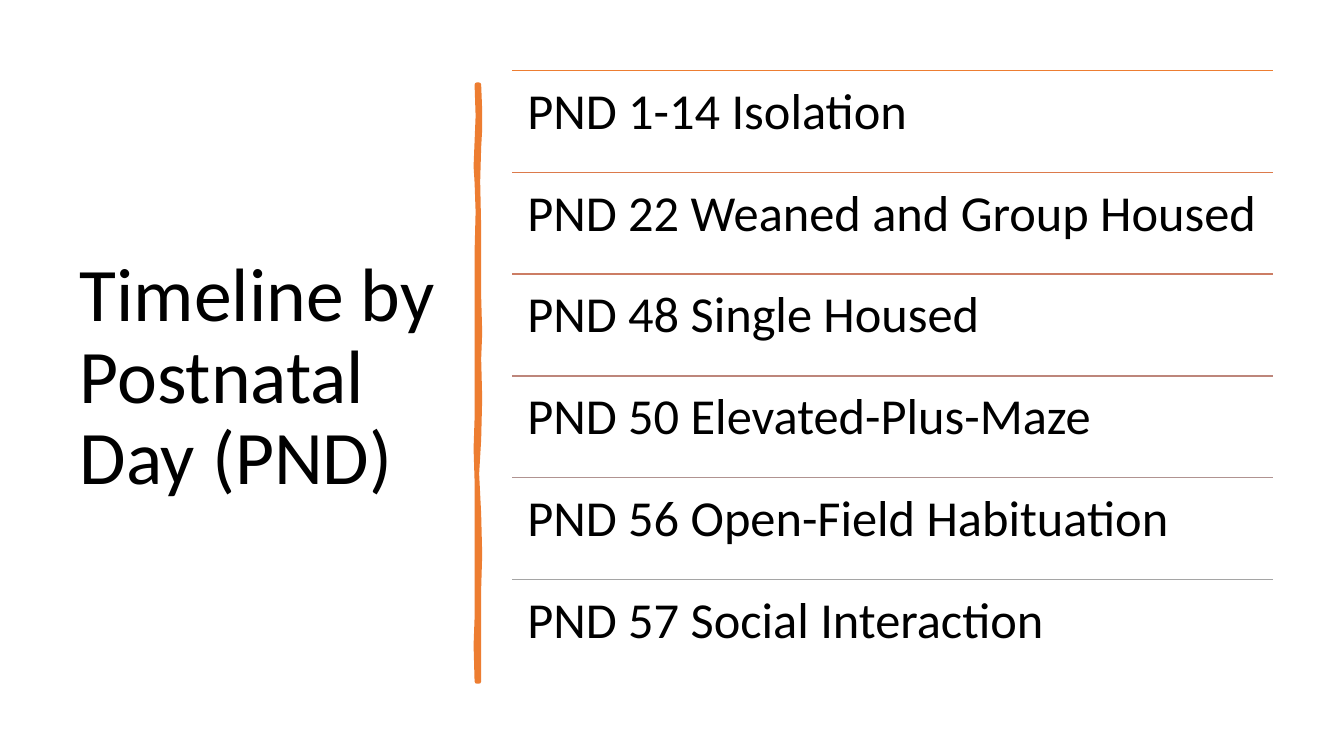
"""Build the postnatal day timeline slide."""
from dataclasses import dataclass

from lxml import etree
from pptx import Presentation
from pptx import util as u
from pptx.dml.color import RGBColor
from pptx.enum import text
from pptx.oxml.ns import qn

PX = 9144
TITLE_ONLY = 5
ROW_TOP, ROW_LEFT, ROW_WIDTH, ROW_HEIGHT = 70, 508, 755, 101
ROW_INSET = 15


@dataclass(frozen=True)
class Theme:
    """Hold the colours, font and type sizes of the slide."""
    font: str = "Calibri"
    ink: str = "000000"
    accent: str = "ED7D31"
    title_size: int = 54
    event_size: int = 36
    rule_width: float = 1
    brush_width: float = 3.25


THEME = Theme()

EVENTS = [
    ("PND 1-14 Isolation", "ED7D31"),
    ("PND 22 Weaned and Group Housed", "DC7A4B"),
    ("PND 48 Single Housed", "CC7D64"),
    ("PND 50 Elevated-Plus-Maze", "BD867B"),
    ("PND 56 Open-Field Habituation", "B09391"),
    ("PND 57 Social Interaction", "A5A5A5"),
]

BRUSH_RIGHT = [
    (475, 84), (476, 110), (476, 128), (475, 146), (474, 180), (475, 226),
    (475, 294), (476, 330), (475, 356), (476, 395), (475, 436), (473, 470),
    (475, 510), (476, 550), (475, 584), (475, 676),
]
BRUSH_LEFT = [
    (473, 676), (472, 640), (473, 613), (473, 557), (473, 477), (472, 445),
    (473, 415), (473, 335), (473, 250), (474, 210), (473, 181), (472, 165),
    (474, 115), (473, 84),
]


def px(*lengths):
    """Turn pixel lengths into EMU."""
    return [u.Emu(length * PX) for length in lengths]


def apply(target, values):
    """Set each attribute named in a dict of format values."""
    for name, value in values.items():
        setattr(target, name, value)


def write(frame, words, size, frame_format):
    """Write one left-aligned paragraph into a text frame."""
    apply(frame, {"word_wrap": True, "auto_size": text.MSO_AUTO_SIZE.NONE, **frame_format})
    paragraph = frame.paragraphs[0]
    apply(paragraph, {"text": words, "line_spacing": 0.9, "alignment": text.PP_ALIGN.LEFT})
    apply(paragraph.font, {"name": THEME.font, "size": u.Pt(size)})
    paragraph.font.color.rgb = RGBColor.from_string(THEME.ink)


def stroke(line, color, width):
    """Give a line its colour and width."""
    line.color.rgb = RGBColor.from_string(color)
    line.width = u.Pt(width)


def add_title(slide, words):
    """Place the slide title at the left."""
    title = slide.shapes.title
    apply(title, dict(zip(("left", "top", "width", "height"), px(69, 70, 374, 611))))
    write(title.text_frame, words, THEME.title_size,
          {"vertical_anchor": text.MSO_ANCHOR.MIDDLE})


def add_brush(slide):
    """Draw the uneven upright brush stroke."""
    start, *rest = BRUSH_RIGHT + BRUSH_LEFT
    builder = slide.shapes.build_freeform(*start, scale=PX)
    builder.add_line_segments(rest, close=True)
    brush = builder.convert_to_shape()
    brush.shadow.inherit = False
    brush.fill.solid()
    brush.fill.fore_color.rgb = RGBColor.from_string(THEME.accent)
    stroke(brush.line, THEME.accent, THEME.brush_width)
    etree.SubElement(brush.line._get_or_add_ln(), qn("a:round"))


def add_rule(slide, top, color):
    """Draw the rule above an event."""
    rule = slide.shapes.add_connector(1, *px(ROW_LEFT, top, ROW_LEFT + ROW_WIDTH, top))
    stroke(rule.line, color, THEME.rule_width)
    etree.SubElement(rule._element.spPr, qn("a:effectLst"))


def add_event(slide, top, words):
    """Place the words of one event."""
    event = slide.shapes.add_textbox(*px(ROW_LEFT, top, ROW_WIDTH, ROW_HEIGHT))
    sides = ("margin_left", "margin_top", "margin_right", "margin_bottom")
    write(event.text_frame, words, THEME.event_size,
          dict.fromkeys(sides, u.Emu(ROW_INSET * PX)))


def main():
    """Build and save the slide."""
    deck = Presentation()
    deck.slide_width, deck.slide_height = px(1333, 750)
    slide = deck.slides.add_slide(deck.slide_layouts[TITLE_ONLY])
    add_title(slide, "Timeline by Postnatal Day (PND)")
    add_brush(slide)
    for row, (words, color) in enumerate(EVENTS):
        top = ROW_TOP + row * ROW_HEIGHT
        add_rule(slide, top, color)
        add_event(slide, top, words)
    deck.save("out.pptx")


if __name__ == "__main__":
    main()
